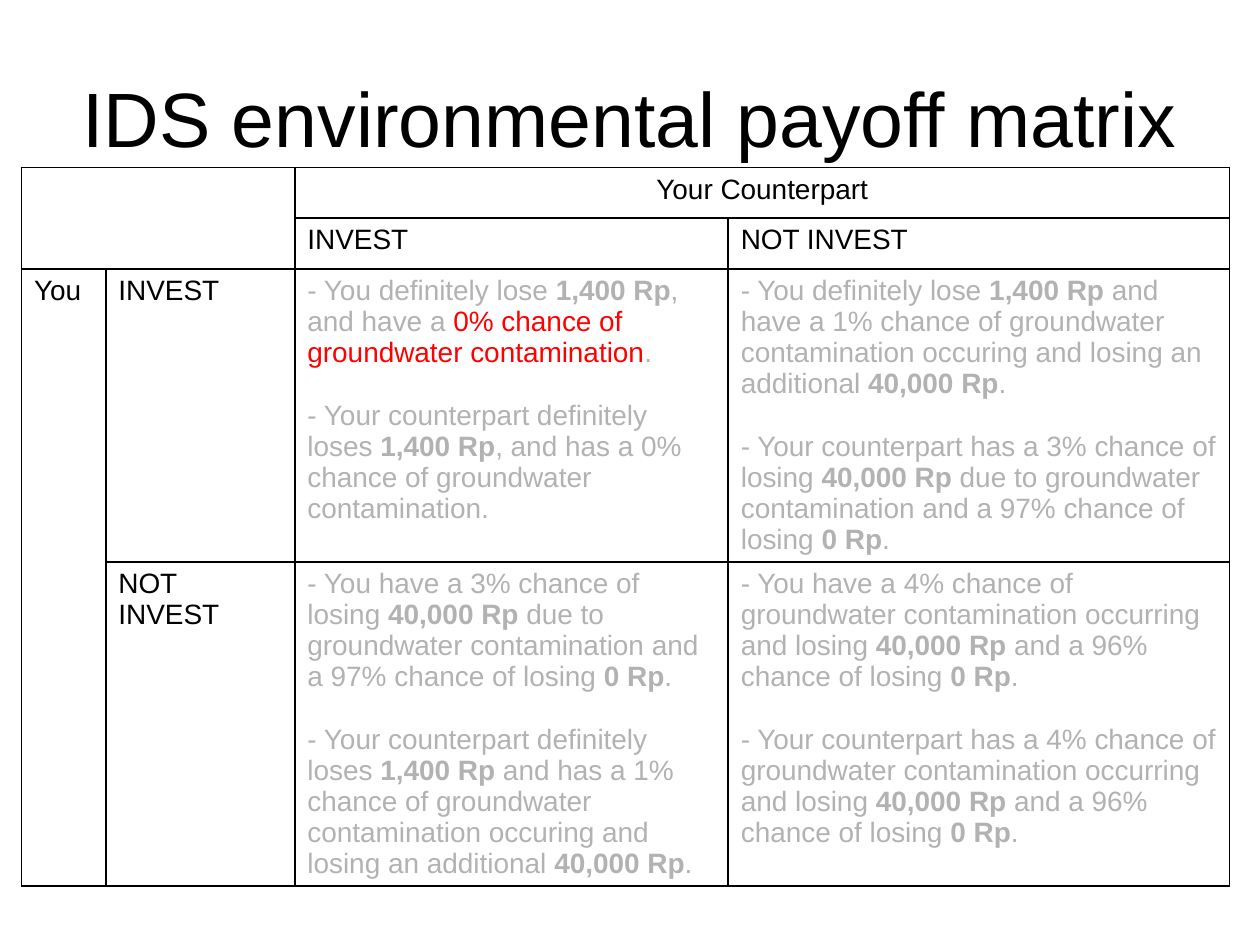
from dataclasses import dataclass

from lxml import etree
from pptx import Presentation
from pptx.dml.color import RGBColor
from pptx.enum import text as t
from pptx.oxml import ns
from pptx.util import Inches, Pt


@dataclass(frozen=True)
class Theme:
    """Colours, font and type sizes of the slide."""
    ink: str = "000000"
    dim: str = "B2B2B2"
    hot: str = "FF0000"
    font: str = "Arial"
    head: int = 44
    body: int = 16
    gap: int = 18
    rule: int = 1


THEME = Theme()
COLS = (0.67, 1.5, 3.44, 3.98)
ROWS = (0.4, 0.4, 2.32, 2.57)
SPANS = (((0, 0), (1, 1)), ((0, 2), (0, 3)), ((2, 0), (3, 0)))
LABELS = {
    (0, 2): ["Your Counterpart"],
    (1, 2): ["INVEST"],
    (1, 3): ["NOT INVEST"],
    (2, 0): ["You"],
    (2, 1): ["INVEST"],
    (3, 1): ["NOT", "INVEST"],
}
PAYOFFS = {
    (2, 2): [
        "- You definitely lose |*1,400 Rp|, and have a "
        "|!0% chance of groundwater contamination|.",
        "- Your counterpart definitely loses |*1,400 Rp|, and has a 0% chance "
        "of groundwater contamination.",
    ],
    (2, 3): [
        "- You definitely lose |*1,400 Rp| and have a 1% chance of groundwater "
        "contamination occuring and losing an additional |*40,000 Rp|.",
        "- Your counterpart has a 3% chance of losing |*40,000 Rp| due to "
        "groundwater contamination and a 97% chance of losing |*0 Rp|.",
    ],
    (3, 2): [
        "- You have a 3% chance of losing |*40,000 Rp| due to groundwater "
        "contamination and a 97% chance of losing |*0 Rp|.",
        "- Your counterpart definitely loses |*1,400 Rp| and has a 1% chance of "
        "groundwater contamination occuring and losing an additional |*40,000 Rp|.",
    ],
    (3, 3): [
        "- You have a 4% chance of groundwater contamination occurring and "
        "losing |*40,000 Rp| and a 96% chance of losing |*0 Rp|.",
        "- Your counterpart has a 4% chance of groundwater contamination "
        "occurring and losing |*40,000 Rp| and a 96% chance of losing |*0 Rp|.",
    ],
}


def add_run(para, words, size, color, bold=False):
    """Add one styled run to a paragraph."""
    run = para.add_run()
    run.text = words
    font = run.font
    font.name, font.size, font.bold = THEME.font, Pt(size), bold
    font.color.rgb = RGBColor.from_string(color)


def add_paras(cell, count):
    """Return the given number of paragraphs in a cell."""
    frame = cell.text_frame
    return [frame.paragraphs[0]] + [frame.add_paragraph() for _ in range(count - 1)]


def fill_label(cell, lines):
    """Write the lines of a heading cell with a hanging indent."""
    for para, line in zip(add_paras(cell, len(lines)), lines):
        props = para._p.get_or_add_pPr()
        props.set("marL", str(Inches(0.38)))
        props.set("indent", str(-Inches(0.38)))
        add_run(para, line, THEME.body, THEME.ink)


def fill_payoff(cell, lines):
    """Write payoff text, where * marks bold parts and ! marks red ones."""
    for i, (para, line) in enumerate(zip(add_paras(cell, len(lines)), lines)):
        para.space_before = Pt(THEME.gap if i else 0)
        for part in line.split("|"):
            color = THEME.hot if part.startswith("!") else THEME.dim
            add_run(para, part.lstrip("*!"), THEME.body, color, part.startswith("*"))


def rule_cell(cell):
    """Clear the fill of a cell and draw its four borders."""
    cell.fill.background()
    props = cell._tc.get_or_add_tcPr()
    for i, side in enumerate(("lnL", "lnR", "lnT", "lnB")):
        line = etree.Element(ns.qn("a:" + side), w=str(Pt(THEME.rule)))
        fill = etree.SubElement(line, ns.qn("a:solidFill"))
        etree.SubElement(fill, ns.qn("a:srgbClr"), val=THEME.ink)
        props.insert(i, line)


def add_title(slide, box, words):
    """Place the title placeholder in its box."""
    title = slide.shapes.title
    title.left, title.top, title.width, title.height = map(Inches, box)
    frame = title.text_frame
    frame.vertical_anchor = t.MSO_ANCHOR.MIDDLE
    para = frame.paragraphs[0]
    para.alignment = t.PP_ALIGN.CENTER
    add_run(para, words, THEME.head, THEME.ink)


def add_matrix(slide, box):
    """Place the payoff matrix in its box."""
    table = slide.shapes.add_table(len(ROWS), len(COLS), *map(Inches, box)).table
    table.first_row = table.horz_banding = False
    for col, width in zip(table.columns, COLS):
        col.width = Inches(width)
    for row, height in zip(table.rows, ROWS):
        row.height = Inches(height)
    for cell in table.iter_cells():
        rule_cell(cell)
    for start, end in SPANS:
        table.cell(*start).merge(table.cell(*end))
    for spot, lines in LABELS.items():
        fill_label(table.cell(*spot), lines)
    for spot, lines in PAYOFFS.items():
        fill_payoff(table.cell(*spot), lines)
    table.cell(0, 2).text_frame.paragraphs[0].alignment = t.PP_ALIGN.CENTER


def main():
    """Build and save the slide."""
    deck = Presentation()
    deck.slide_width, deck.slide_height = Inches(10), Inches(7.5)
    slide = deck.slides.add_slide(deck.slide_layouts[5])
    add_title(slide, (0.5, 0.3, 9, 1.25), "IDS environmental payoff matrix")
    add_matrix(slide, (0.17, 1.33, sum(COLS), sum(ROWS)))
    deck.save("out.pptx")


if __name__ == "__main__":
    main()
